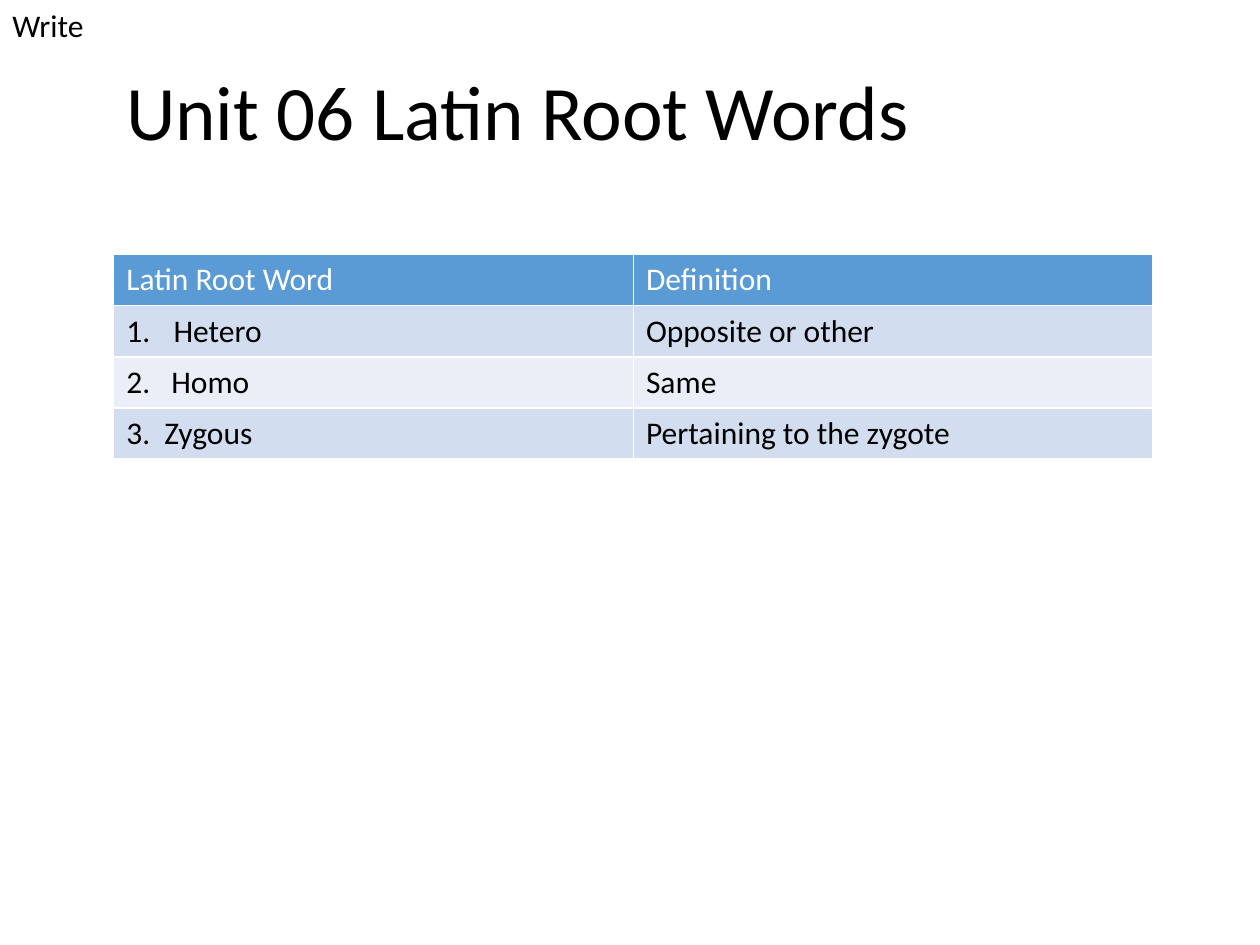
from lxml import etree
from pptx import Presentation
from pptx.dml.color import RGBColor
from pptx.enum.text import MSO_ANCHOR
from pptx.oxml.ns import qn
from pptx.util import Pt

MIDDLE, TOP = MSO_ANCHOR.MIDDLE, MSO_ANCHOR.TOP
FONT = "Calibri"
COLORS = {
    "text": "000000",
    "white": "FFFFFF",
    "header": "5B9BD5",
    "band_dark": "D2DEEF",
    "band_light": "EAEFF7",
}
HEADINGS = ("Latin Root Word", "Definition")
# root word, its indent after the number in points, definition
ROOTS = [
    ("Hetero", 27, "Opposite or other"),
    ("Homo", 25.7, "Same"),
    ("Zygous", 21.7, "Pertaining to the zygote"),
]


def add_span(para, text, size, color):
    span = para.add_run()
    span.text = text
    span.font.name = FONT
    span.font.size = Pt(size)
    span.font.bold = False
    span.font.color.rgb = RGBColor.from_string(COLORS[color])


def add_label(page, box, text, size, anchor=TOP, wrap=True, spacing=None):
    label = page.shapes.add_textbox(*(Pt(length) for length in box))
    frame = label.text_frame
    frame.word_wrap = wrap
    frame.vertical_anchor = anchor
    para = frame.paragraphs[0]
    para.line_spacing = spacing
    add_span(para, text, size, "text")


def number_paragraph(para, number, indent):
    properties = para._p.get_or_add_pPr()
    properties.set("marL", str(Pt(indent)))
    properties.set("indent", str(-Pt(indent)))
    etree.SubElement(properties, qn("a:buFont"), typeface="+mj-lt")
    etree.SubElement(properties, qn("a:buAutoNum"), type="arabicPeriod",
                     startAt=str(number))


def add_borders(cell):
    properties = cell._tc.get_or_add_tcPr()
    for position, side in enumerate(("lnL", "lnR", "lnT", "lnB")):
        line = etree.Element(qn(f"a:{side}"), w=str(Pt(1)))
        fill = etree.SubElement(line, qn("a:solidFill"))
        etree.SubElement(fill, qn("a:srgbClr"), val=COLORS["white"])
        properties.insert(position, line)


def fill_cell(cell, text, fill, color):
    cell.fill.solid()
    cell.fill.fore_color.rgb = RGBColor.from_string(COLORS[fill])
    add_borders(cell)
    add_span(cell.text_frame.paragraphs[0], text, 18, color)


def add_root_table(page, box):
    table = page.shapes.add_table(
        len(ROOTS) + 1, len(HEADINGS), *(Pt(length) for length in box)).table
    table.first_row = table.horz_banding = False
    for column, heading in enumerate(HEADINGS):
        fill_cell(table.cell(0, column), heading, "header", "white")
    for number, (root, indent, definition) in enumerate(ROOTS, start=1):
        band = "band_dark" if number % 2 else "band_light"
        root_cell = table.cell(number, 0)
        number_paragraph(root_cell.text_frame.paragraphs[0], number, indent)
        fill_cell(root_cell, root, band, "text")
        fill_cell(table.cell(number, 1), definition, band, "text")


def main():
    deck = Presentation()
    deck.slide_width, deck.slide_height = Pt(720), Pt(540)
    page = deck.slides.add_slide(deck.slide_layouts[6])
    add_label(page, (65, 8.5, 594, 114.5), "Unit 06 Latin Root Words", 44,
              anchor=MIDDLE, spacing=0.9)
    add_root_table(page, (65, 145.5, 594, 116.8))
    add_label(page, (0, 0, 62, 29), "Write", 18, wrap=False)
    deck.save("out.pptx")


if __name__ == "__main__":
    main()
